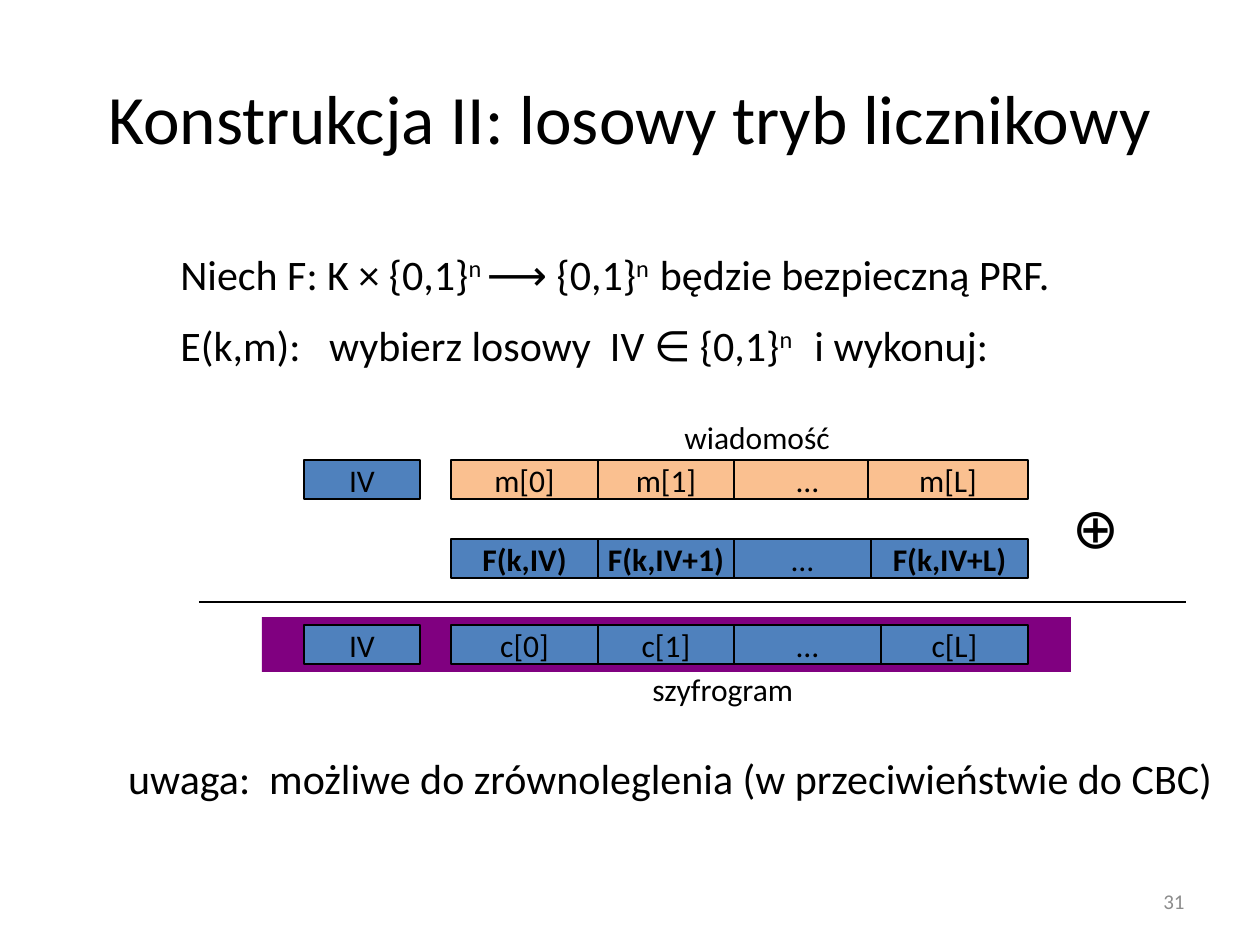
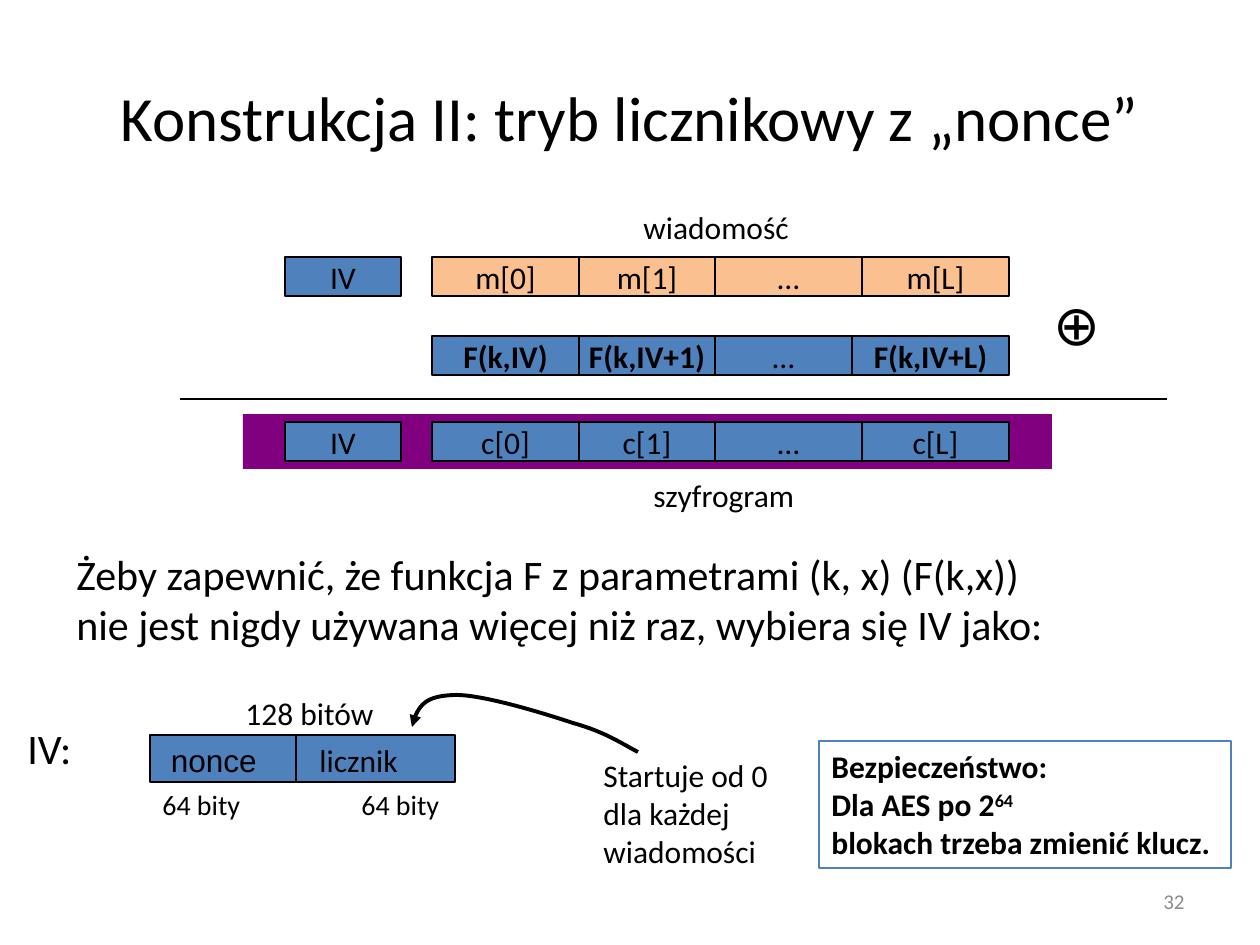
from lxml.etree import SubElement
from pptx import Presentation
from pptx.dml.color import RGBColor
from pptx.enum.shapes import MSO_CONNECTOR, MSO_SHAPE
from pptx.enum.text import MSO_ANCHOR, MSO_AUTO_SIZE, PP_ALIGN
from pptx.oxml.ns import qn
from pptx.util import Pt

PX = 914400 / 126
SLIDE_SIZE = (1260, 945)
COLORS = {
    "text": "000000", "number": "8C8C8C", "message": "FAC090",
    "block": "4F81BD", "ciphertext": "800080",
}
LEFT, CENTER, RIGHT = PP_ALIGN.LEFT, PP_ALIGN.CENTER, PP_ALIGN.RIGHT
MIDDLE = {"vertical_anchor": MSO_ANCHOR.MIDDLE}
CELL_FRAME = {"word_wrap": False, **MIDDLE}
LABEL_FRAME = {"word_wrap": False, "auto_size": MSO_AUTO_SIZE.SHAPE_TO_FIT_TEXT}

# In texts, ^ switches superscript on and off.
# Labels: text, (left, top, width, height), size, alignment
SLIDES = [
    {
        "title": ("Konstrukcja II: losowy tryb licznikowy", 39.6),
        "number": "31",
        "diagram_origin": (304, 460),
        "last_message_width": 160,
        "labels": [
            ("wiadomość", (672, 412, 173, 50), 18, LEFT),
            ("szyfrogram", (640, 664, 168, 50), 18, LEFT),
            ("uwaga:  możliwe do zrównoleglenia (w przeciwieństwie do CBC)",
             (111, 746, 1119, 63), 24, CENTER),
            (["Niech F: K × {0,1}^n ^⟶ {0,1}^n  ^będzie bezpieczną PRF.",
              "E(k,m):   wybierz losowy  IV ∈ {0,1}^n    ^i wykonuj:"],
             (168, 242, 907, 136), 24, LEFT),
        ],
    },
    {
        "title": ("Konstrukcja II: tryb licznikowy z „nonce”", 36),
        "number": "32",
        "diagram_origin": (285, 257),
        "last_message_width": 147,
        "labels": [
            ("wiadomość", (631, 202, 173, 50), 18, LEFT),
            ("szyfrogram", (641, 470, 168, 50), 18, LEFT),
            ("Żeby zapewnić, że funkcja F z parametrami (k, x) (F(k,x))\n"
             "nie jest nigdy używana więcej niż raz, wybiera się IV jako:",
             (64, 542, 1011, 115), 24, LEFT),
            ("IV:", (15, 716, 72, 63), 24, LEFT),
            ("128 bitów", (233, 688, 155, 50), 18, LEFT),
            ("64 bity", (150, 781, 105, 47), 16, LEFT),
            ("64 bity", (349, 781, 105, 47), 16, LEFT),
            ("Startuje od 0\ndla każdej\nwiadomości", (591, 750, 192, 127), 18, LEFT),
        ],
    },
]

# Places in the diagram are measured from the corner of the upper IV block.
ROW_HEIGHT = 39
IV_WIDTH = 116
ROW_LEFT, ROW_RIGHT = 147, 724
ROW_TOPS = {"message": 0, "function": 79, "ciphertext": 165}
FIRST_WIDTHS = (147, 136)

IV_FIELDS = (150, 735, 305, 47)
IV_DIVIDER = 296
SECURITY_NOTE = "Bezpieczeństwo:\nDla AES po 2^64 \n^blokach trzeba zmienić klucz."
# Start point, then three points for each Bézier segment
COUNTER_ARROW = [
    (638, 752),
    (619, 742), (605, 732), (573, 723),
    (543, 713), (481, 694), (454, 695),
    (427, 696), (415, 709), (412, 727),
]


def emu(*lengths):
    return [round(length * PX) for length in lengths]


def color(name):
    return RGBColor.from_string(COLORS[name])


def set_values(target, values):
    for name, value in values.items():
        setattr(target, name, value)


def write_paragraph(paragraph, text, size, font_color, font_name, bold):
    for part_index, part in enumerate(text.split("^")):
        for line_index, line in enumerate(part.split("\n")):
            if line_index:
                paragraph.add_line_break()
            if not line:
                continue
            run = paragraph.add_run()
            run.text = line
            set_values(run.font, {"name": font_name, "size": Pt(size), "bold": bold})
            run.font.color.rgb = color(font_color)
            if part_index % 2:
                run.font._element.set("baseline", "30000")


def write(shape, text, size=18, align=LEFT, frame=None, font_color="text",
          font_name="Calibri", bold=False):
    """Fill a shape with one paragraph, or with one per item of a list."""
    text_frame = shape.text_frame
    set_values(text_frame, frame or {})
    for index, line in enumerate([text] if isinstance(text, str) else text):
        paragraph = text_frame.add_paragraph() if index else text_frame.paragraphs[0]
        paragraph.alignment = align
        if index:
            paragraph.space_before = Pt(12)
        write_paragraph(paragraph, line, size, font_color, font_name, bold)


def add_text(slide, text, box, **options):
    write(slide.shapes.add_textbox(*emu(*box)), text, **options)


def add_rectangle(slide, box, fill=None, outline="text"):
    shape = slide.shapes.add_shape(MSO_SHAPE.RECTANGLE, *emu(*box))
    shape.shadow.inherit = False
    if fill:
        shape.fill.solid()
        shape.fill.fore_color.rgb = color(fill)
    else:
        shape.fill.background()
    if outline:
        shape.line.color.rgb = color(outline)
        shape.line.width = Pt(0.75)
    else:
        shape.line.fill.background()
    return shape


def add_line(slide, start, end):
    line = slide.shapes.add_connector(MSO_CONNECTOR.STRAIGHT, *emu(*start, *end))
    line.line.color.rgb = color("text")
    line.line.width = Pt(0.75)
    SubElement(line._element.spPr, qn("a:effectLst"))


def add_cell(slide, text, box, fill="block", bold=False):
    shape = add_rectangle(slide, box, fill)
    write(shape, text, align=CENTER, frame=CELL_FRAME, bold=bold)


def add_row(slide, left, top, texts, last_widths, fill="block", bold=False):
    """Pack cells from the left; the last one ends at the row's right edge."""
    widths = FIRST_WIDTHS + last_widths
    lefts = [ROW_LEFT + sum(widths[:index]) for index in range(len(widths) - 1)]
    lefts.append(ROW_RIGHT - widths[-1])
    for text, cell_left, width in zip(texts, lefts, widths):
        add_cell(slide, text, (left + cell_left, top, width, ROW_HEIGHT),
                 fill, bold and text != "…")


def add_diagram(slide, origin, last_message_width):
    left, top = origin
    tops = {name: top + offset for name, offset in ROW_TOPS.items()}
    add_rectangle(slide, (left - 42, top + 157, 809, 55), "ciphertext", None)
    add_row(slide, left, tops["message"], ["m[0]", "m[1]", "…", "m[L]"],
            (147, last_message_width), "message")
    add_row(slide, left, tops["function"],
            ["F(k,IV)", "F(k,IV+1)", "…", "F(k,IV+L)"], (137, 157), bold=True)
    add_row(slide, left, tops["ciphertext"], ["c[0]", "c[1]", "…", "c[L]"], (147, 147))
    for name in ("message", "ciphertext"):
        add_cell(slide, "IV", (left, tops[name], IV_WIDTH, ROW_HEIGHT))
    add_text(slide, "⊕", (left + 756, top + 26, 69, 81), size=32, frame=LABEL_FRAME)
    add_line(slide, (left - 105, top + 142), (left + 882, top + 142))


def add_curved_arrow(slide, points):
    start, *others = points
    builder = slide.shapes.build_freeform(*start, scale=PX)
    builder.add_line_segments(others, close=False)
    shape = builder.convert_to_shape()
    shape.shadow.inherit = False
    shape.fill.background()
    shape.line.color.rgb = color("text")
    shape.line.width = Pt(2.25)
    SubElement(shape.line._get_or_add_ln(), qn("a:tailEnd"), type="triangle")
    segments = list(shape._element.iter(qn("a:lnTo")))
    outline = segments[0].getparent()
    for first in range(0, len(segments), 3):
        curve = SubElement(outline, qn("a:cubicBezTo"))
        for segment in segments[first:first + 3]:
            curve.append(segment[0])
            outline.remove(segment)


def add_iv_layout(slide):
    left, top, width, height = IV_FIELDS
    write(add_rectangle(slide, IV_FIELDS, "block"), "nonce", font_name="Arial",
          frame={"margin_left": emu(21)[0], "vertical_anchor": MSO_ANCHOR.TOP})
    add_line(slide, (IV_DIVIDER, top), (IV_DIVIDER, top + height))
    add_text(slide, "licznik", (307, top, 105, 50), frame=LABEL_FRAME)
    add_curved_arrow(slide, COUNTER_ARROW)
    write(add_rectangle(slide, (819, 741, 412, 127), outline="block"),
          SECURITY_NOTE, bold=True,
          frame={"word_wrap": True, "vertical_anchor": MSO_ANCHOR.TOP})


def add_slide(presentation, content):
    slide = presentation.slides.add_slide(presentation.slide_layouts[6])
    title, title_size = content["title"]
    frame = {"word_wrap": True, **MIDDLE}
    add_text(slide, title, (63, 38, 1134, 157), size=title_size, align=CENTER, frame=frame)
    add_text(slide, content["number"], (903, 876, 294, 50), size=12, align=RIGHT,
             frame=frame, font_color="number")
    add_diagram(slide, content["diagram_origin"], content["last_message_width"])
    for text, box, size, align in content["labels"]:
        add_text(slide, text, box, size=size, align=align, frame=LABEL_FRAME)
    return slide


def main():
    presentation = Presentation()
    presentation.slide_width, presentation.slide_height = emu(*SLIDE_SIZE)
    slides = [add_slide(presentation, content) for content in SLIDES]
    add_iv_layout(slides[-1])
    presentation.save("out.pptx")


if __name__ == "__main__":
    main()
